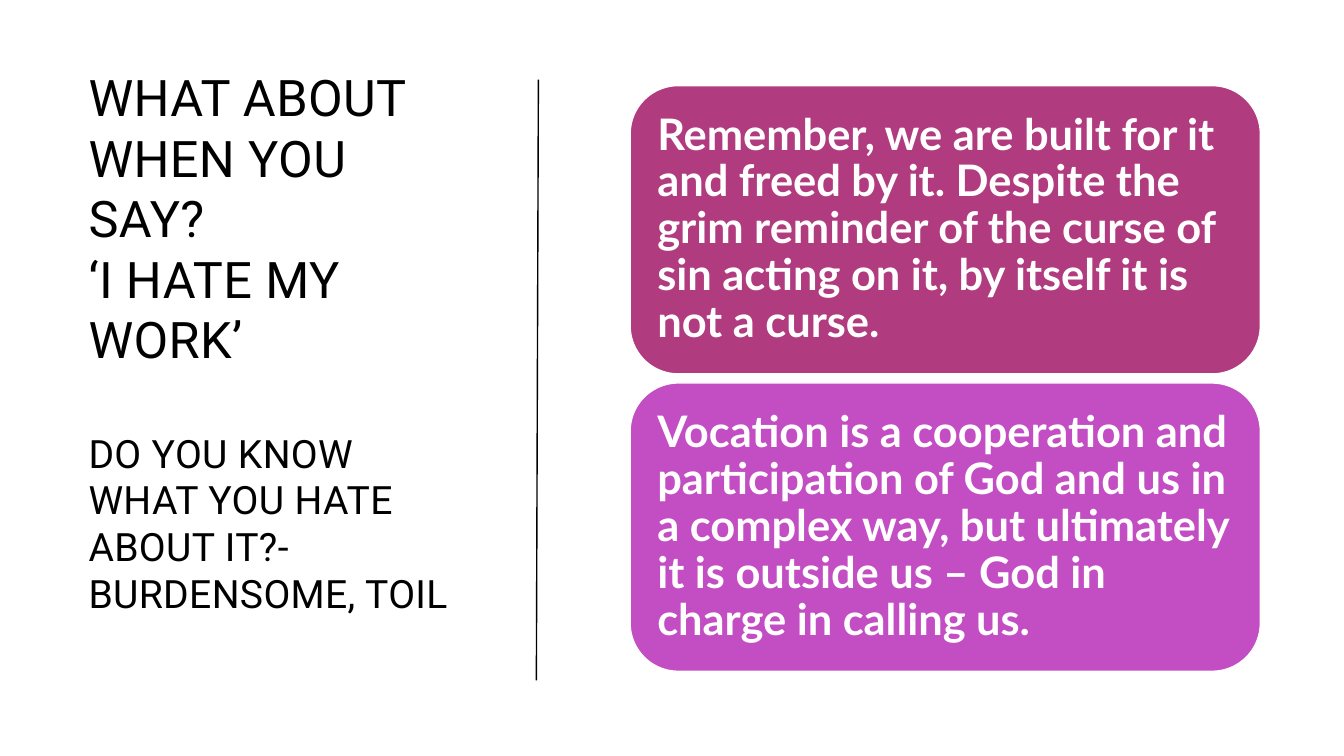
import pptx
import pptx.util
import pptx.dml.color
import pptx.enum.shapes
import pptx.enum.text
import pptx.oxml.ns
from lxml import etree

Inches = pptx.util.Inches
Pt = pptx.util.Pt
RGBColor = pptx.dml.color.RGBColor
Shape = pptx.enum.shapes.MSO_SHAPE
Anchor = pptx.enum.text.MSO_ANCHOR
Align = pptx.enum.text.PP_ALIGN

BLACK = RGBColor(0x00, 0x00, 0x00)
WHITE = RGBColor(0xFF, 0xFF, 0xFF)
BERRY = RGBColor(0xB1, 0x3B, 0x7F)
ORCHID = RGBColor(0xC3, 0x4D, 0xC2)

WIDE, HIGH = 13.33, 7.5
GAP = 0.09

TITLE = [
    ("WHAT ABOUT WHEN YOU SAY?", 36, 0),
    ("‘I HATE MY WORK’", 36, 0),
    ("DO YOU KNOW WHAT YOU HATE ABOUT IT?- BURDENSOME, TOIL", 27.9, 43),
]
CARDS = [
    (BERRY, "Remember, we are built for it and freed by it. Despite the grim "
            "reminder of the curse of sin acting on it, by itself it is not a curse."),
    (ORCHID, "Vocation is a cooperation and participation of God and us in a complex "
             "way, but ultimately it is outside us – God in charge in calling us."),
]


def write(para, text, face, size, color, bold=False):
    run = para.add_run()
    run.text = text
    run.font.name = face
    run.font.size = Pt(size)
    run.font.color.rgb = color
    run.font.bold = bold
    return run


def title(slide, left, top, width, height):
    box = slide.shapes.add_textbox(Inches(left), Inches(top), Inches(width), Inches(height))
    frame = box.text_frame
    frame.word_wrap = True
    frame.margin_right = Inches(0.2)
    for row, (text, size, before) in enumerate(TITLE):
        para = frame.add_paragraph() if row else frame.paragraphs[0]
        para.space_before = Pt(before)
        run = write(para, text, "Roboto", size, BLACK)
        run._r.get_or_add_rPr().set("spc", "30")


def divide(slide, left, top, width, height):
    line = slide.shapes.add_connector(
        pptx.enum.shapes.MSO_CONNECTOR.STRAIGHT,
        Inches(left), Inches(top + height), Inches(left + width), Inches(top))
    line.line.color.rgb = BLACK
    line.line.width = Pt(1)
    etree.SubElement(line._element.spPr, pptx.oxml.ns.qn("a:effectLst"))


def cards(slide, left, top, width, height):
    tall = (height - GAP * (len(CARDS) - 1)) / len(CARDS)
    for row, (color, text) in enumerate(CARDS):
        card = slide.shapes.add_shape(
            Shape.ROUNDED_RECTANGLE, Inches(left), Inches(top + row * (tall + GAP)),
            Inches(width), Inches(tall))
        card.shadow.inherit = False
        card.fill.solid()
        card.fill.fore_color.rgb = color
        card.line.color.rgb = WHITE
        card.line.width = Pt(1)
        frame = card.text_frame
        frame.word_wrap = True
        frame.vertical_anchor = Anchor.MIDDLE
        frame.margin_left = frame.margin_right = Inches(0.13)
        frame.margin_top = frame.margin_bottom = Inches(0.13)
        para = frame.paragraphs[0]
        para.alignment = Align.LEFT
        para.line_spacing = 0.9
        write(para, text, "Lato", 31, WHITE, True)


def main():
    deck = pptx.Presentation()
    deck.slide_width = Inches(WIDE)
    deck.slide_height = Inches(HIGH)
    slide = deck.slides.add_slide(deck.slide_layouts[6])
    title(slide, 0.78, 0.61, 3.96, 4.99)
    divide(slide, 5.32, 0.79, 0.02, 5.96)
    cards(slide, 6.25, 0.85, 6.25, 5.81)
    deck.save("out.pptx")


if __name__ == "__main__":
    main()
